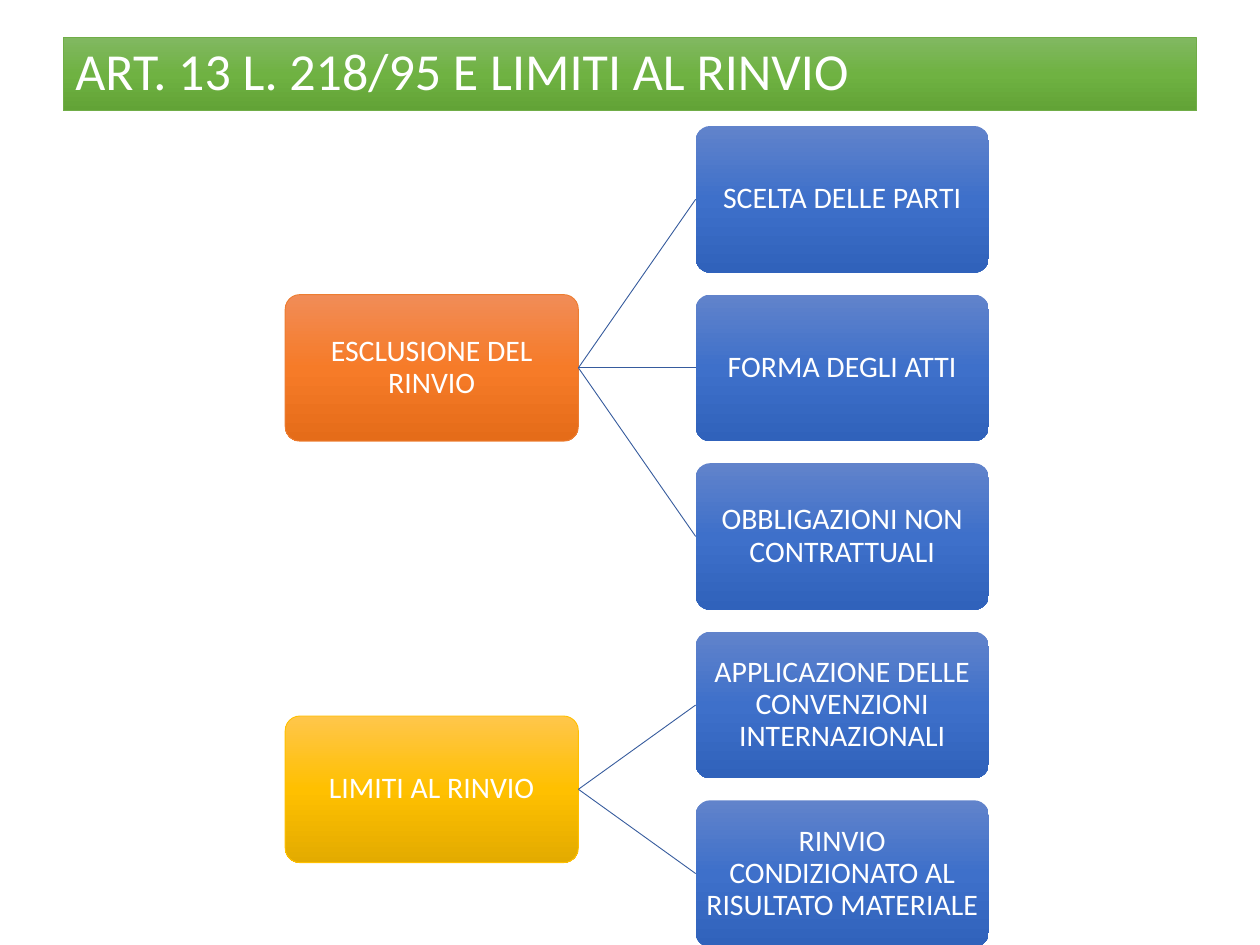
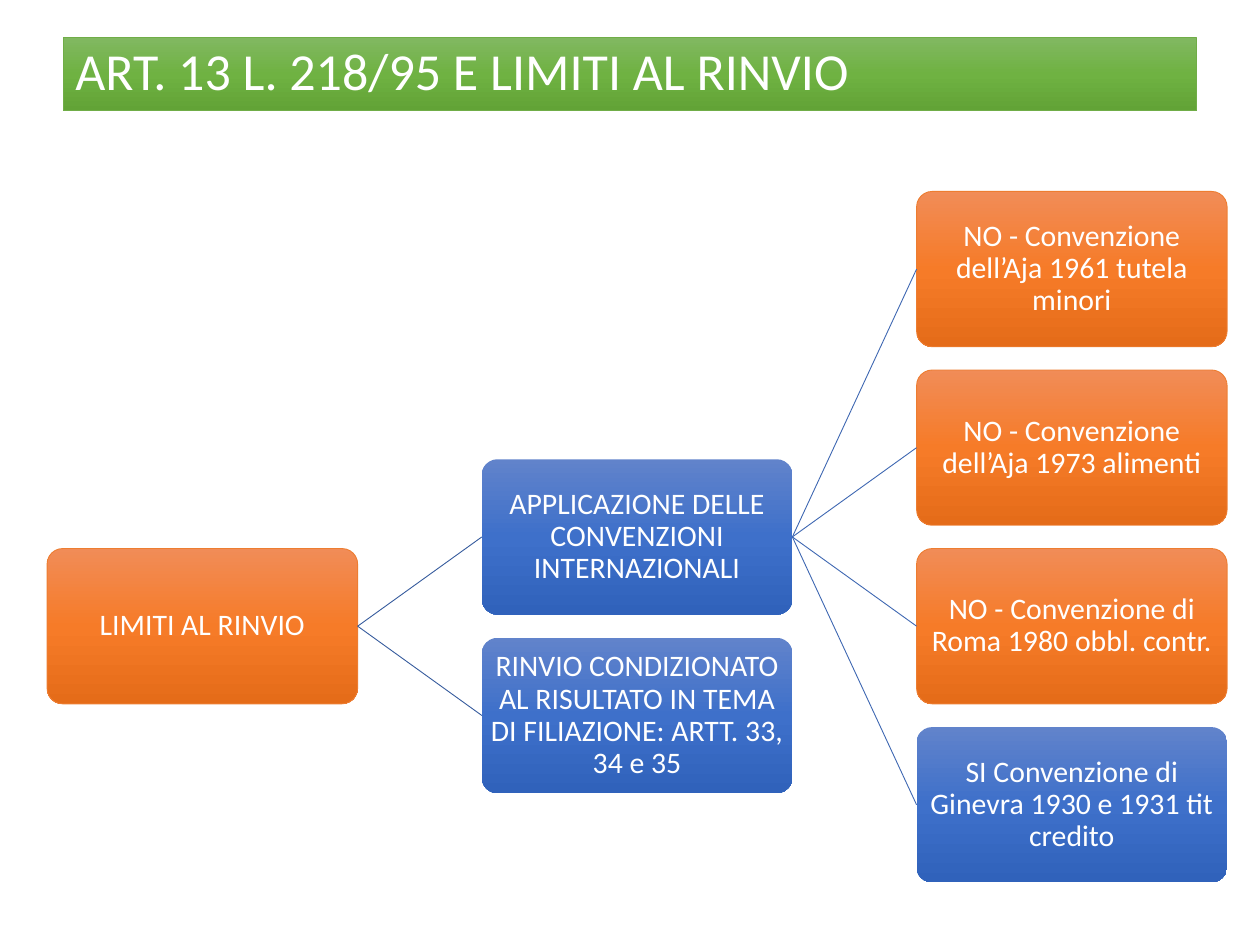
from copy import deepcopy

from lxml import etree
from pptx import Presentation
from pptx.dml.color import RGBColor
from pptx.enum.shapes import MSO_CONNECTOR, MSO_SHAPE
from pptx.enum.text import MSO_ANCHOR, PP_ALIGN
from pptx.oxml.ns import qn
from pptx.util import Cm, Pt

RECT, ROUNDED = MSO_SHAPE.RECTANGLE, MSO_SHAPE.ROUNDED_RECTANGLE
STRAIGHT = MSO_CONNECTOR.STRAIGHT
MIDDLE = MSO_ANCHOR.MIDDLE
LEFT, CENTER = PP_ALIGN.LEFT, PP_ALIGN.CENTER
LEFT_SIDE, RIGHT_SIDE = 1, 3

# Shared look: three gradient stops and an outline for each colour
TITLE = "ART. 13 L. 218/95 E LIMITI AL RINVIO"
PALETTE = {
    "green": (("81B861", "6FB242", "62A336"), "70AD47"),
    "orange": (("F18C57", "F67B28", "E56C19"), "ED7D31"),
    "yellow": (("FFC64B", "FFC000", "E3AB00"), "FFC000"),
    "blue": (("6183CB", "3E70CA", "3062BB"), None),
}
LINK_COLORS = {1: "365B9D", 2: "3E67B2"}
LINE_WIDTH = Pt(0.5)
COL_STEP, ROW_STEP = 1.4, 1.15  # in box widths and box heights

# Each tree: left, top, box width, and boxes as (text, column, row, colour, parent)
TREES = [
    (5.75, 2.54, 5.91, [
        ("ESCLUSIONE DEL RINVIO", 0, 1, "orange", None),
        ("SCELTA DELLE PARTI", 1, 0, "blue", 0),
        ("FORMA DEGLI ATTI", 1, 1, "blue", 0),
        ("OBBLIGAZIONI NON CONTRATTUALI", 1, 2, "blue", 0),
        ("LIMITI AL RINVIO", 0, 3.5, "yellow", None),
        ("APPLICAZIONE DELLE CONVENZIONI INTERNAZIONALI", 1, 3, "blue", 4),
        ("RINVIO CONDIZIONATO AL RISULTATO MATERIALE", 1, 4, "blue", 4),
    ]),
    (0.95, 3.86, 6.26, [
        ("LIMITI AL RINVIO", 0, 2, "orange", None),
        ("APPLICAZIONE DELLE CONVENZIONI INTERNAZIONALI", 1, 1.5, "blue", 0),
        ("NO - Convenzione dell’Aja 1961 tutela minori", 2, 0, "orange", 1),
        ("NO - Convenzione dell’Aja 1973 alimenti", 2, 1, "orange", 1),
        ("NO - Convenzione di Roma 1980 obbl. contr.", 2, 2, "orange", 1),
        ("SI Convenzione di Ginevra 1930 e 1931 tit credito", 2, 3, "blue", 1),
        ("RINVIO CONDIZIONATO AL RISULTATO IN TEMA DI FILIAZIONE: ARTT. 33, 34 e 35",
         1, 2.5, "blue", 0),
    ]),
]


def rgb(value):
    return RGBColor.from_string(value)


def add_box(s, kind, box, text, color, size, align, inset=None):
    sp = s.shapes.add_shape(kind, *[Cm(v) for v in box])
    sp.shadow.inherit = False
    if kind == ROUNDED:
        sp.adjustments[0] = 0.1

    # Gradient from top to bottom with a middle stop
    stops, outline = PALETTE[color]
    sp.fill.gradient()
    sp.fill.gradient_angle = 270
    first = sp._element.spPr.find(".//" + qn("a:gs"))
    middle = deepcopy(first)
    middle.set("pos", "50000")
    first.addnext(middle)
    for stop, value in zip(sp.fill.gradient_stops, stops):
        stop.color.rgb = rgb(value)
    if outline:
        sp.line.color.rgb = rgb(outline)
        sp.line.width = LINE_WIDTH
    else:
        sp.line.fill.background()

    # Text
    tf = sp.text_frame
    frame_format = {"word_wrap": True, "vertical_anchor": MIDDLE}
    if inset is not None:
        for side in ("left", "right", "top", "bottom"):
            frame_format["margin_" + side] = Cm(inset)
    p = tf.paragraphs[0]
    r = p.add_run()
    r.text = text
    r.font.color.rgb = rgb("FFFFFF")
    for target, values in (
        (tf, frame_format),
        (p, {"alignment": align, "line_spacing": 0.9}),
        (r.font, {"name": "Calibri", "size": Pt(size)}),
    ):
        for name, value in values.items():
            setattr(target, name, value)
    return sp


prs = Presentation()
prs.slide_width, prs.slide_height = Cm(25.4), Cm(19.05)

for left, top, width, nodes in TREES:
    s = prs.slides.add_slide(prs.slide_layouts[6])
    height = width / 2

    # Title band
    add_box(s, RECT, (1.27, 0.76, 22.86, 1.47), TITLE, "green", 29.7, LEFT)

    # Boxes, each joined to its parent
    boxes = []
    for text, col, row, color, parent in nodes:
        x = left + col * COL_STEP * width
        y = top + row * ROW_STEP * height
        sp = add_box(s, ROUNDED, (x, y, width, height), text, color, 17, CENTER, 0.03)
        boxes.append(sp)
        if parent is not None:
            link = s.shapes.add_connector(STRAIGHT, 0, 0, 0, 0)
            link.begin_connect(boxes[parent], RIGHT_SIDE)
            link.end_connect(sp, LEFT_SIDE)
            link.line.color.rgb = rgb(LINK_COLORS[col])
            link.line.width = LINE_WIDTH
            etree.SubElement(link._element.spPr, qn("a:effectLst"))

prs.save("out.pptx")
